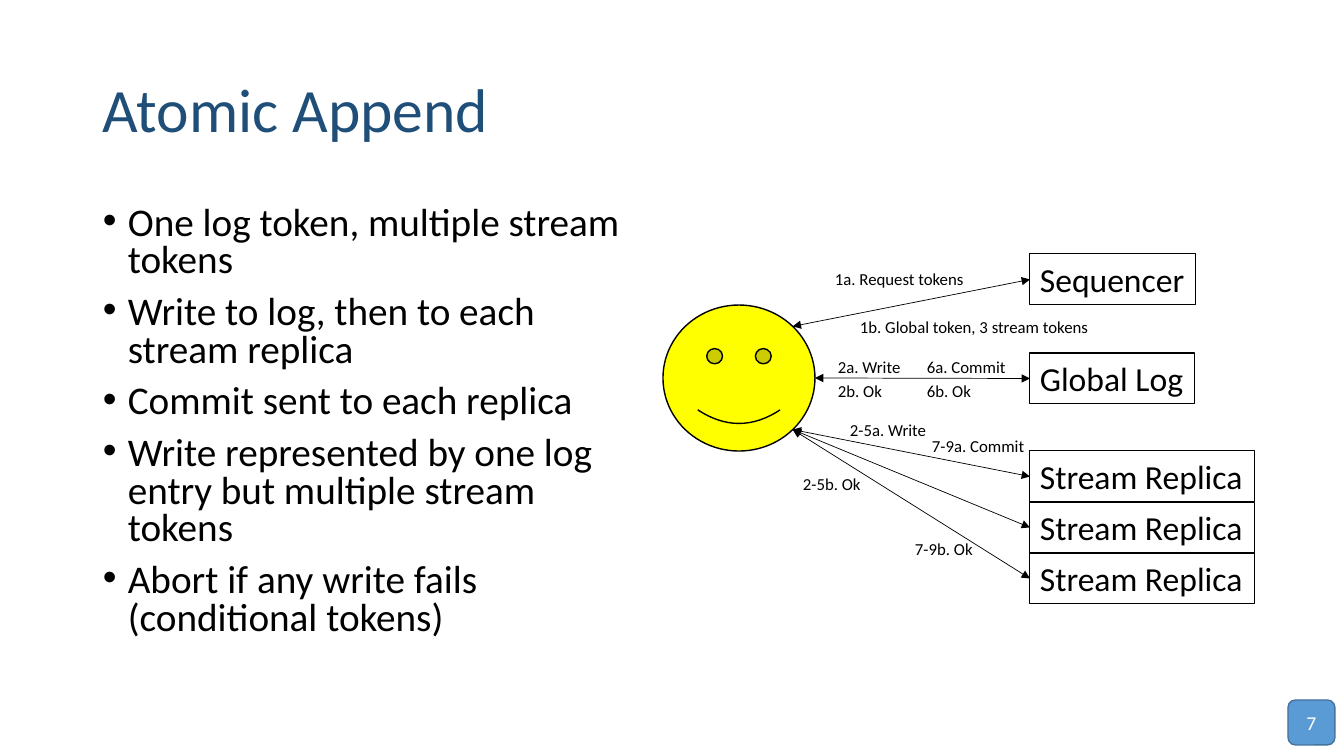
from math import cos, pi, sin

from lxml import etree
from pptx import Presentation
from pptx.dml.color import RGBColor
from pptx.enum.shapes import MSO_CONNECTOR, MSO_SHAPE
from pptx.enum.text import MSO_ANCHOR, MSO_AUTO_SIZE, PP_ALIGN
from pptx.oxml.ns import qn
from pptx.util import Pt

# Content, lengths in px
TITLE = "Atomic Append"
POINTS = [
    "One log token, multiple stream tokens",
    "Write to log, then to each stream replica",
    "Commit sent to each replica",
    "Write represented by one log entry but multiple stream tokens",
    "Abort if any write fails (conditional tokens)",
]
PAGE = "7"
# Server: name, top, width, angle at which its arrow leaves the client
SERVERS = [
    ("Sequencer", 254, 166, -pi / 4),
    ("Global Log", 353, 165, 0),
    ("Stream Replica", 451, 225, pi / 4),
    ("Stream Replica", 502, 225, pi / 4),
    ("Stream Replica", 553, 225, pi / 4),
]
# Message: text, left, top, width
MESSAGES = [
    ("1a. Request tokens", 825, 264, 150),
    ("1b. Global token, 3 stream tokens", 850, 312, 252),
    ("2a. Write", 828, 352, 86),
    ("6a. Commit", 917, 352, 102),
    ("2b. Ok", 828, 376, 67),
    ("6b. Ok", 917, 376, 67),
    ("2-5a. Write", 840, 415, 97),
    ("2-5b. Ok", 793, 469, 79),
    ("7-9a. Commit", 922, 431, 114),
    ("7-9b. Ok", 905, 534, 79),
]

CLIENT = (663, 305, 152, 146)
SERVER_LEFT, SERVER_HEIGHT, MESSAGE_HEIGHT = 1030, 51, 30
INDENT = 25

FONT = "Calibri"
BLACK = RGBColor(0x00, 0x00, 0x00)
WHITE = RGBColor(0xFF, 0xFF, 0xFF)
NAVY = RGBColor(0x1F, 0x4E, 0x79)
YELLOW = RGBColor(0xFF, 0xFF, 0x00)
BLUE = RGBColor(0x5B, 0x9B, 0xD5)
DARK_BLUE = RGBColor(0x43, 0x73, 0x9E)

RECT, ROUNDED, SMILEY = MSO_SHAPE.RECTANGLE, MSO_SHAPE.ROUNDED_RECTANGLE, MSO_SHAPE.SMILEY_FACE
STRAIGHT = MSO_CONNECTOR.STRAIGHT
MIDDLE, TOP = MSO_ANCHOR.MIDDLE, MSO_ANCHOR.TOP
LEFT, CENTER = PP_ALIGN.LEFT, PP_ALIGN.CENTER
GROW = MSO_AUTO_SIZE.SHAPE_TO_FIT_TEXT

SCALE = 914400 / 100.8


def emu(*lengths):
    return [round(length * SCALE) for length in lengths]


def apply(target, formats):
    for name, value in formats.items():
        setattr(target, name, value)


def write(shape, lines, size, color, frame_format, paragraph_format):
    frame = shape.text_frame
    apply(frame, frame_format)
    frame.text = "\n".join(lines)
    for paragraph in frame.paragraphs:
        apply(paragraph, paragraph_format)
        apply(paragraph.font, {"name": FONT, "size": Pt(size)})
        paragraph.font.color.rgb = color
    return frame


def add_box(kind, box, fill, line, width):
    shape = slide.shapes.add_shape(kind, *emu(*box))
    shape.shadow.inherit = False
    if fill is None:
        shape.fill.background()
    else:
        shape.fill.solid()
        shape.fill.fore_color.rgb = fill
    shape.line.color.rgb = line
    shape.line.width = Pt(width)
    return shape


def add_arrow(start, end):
    arrow = slide.shapes.add_connector(STRAIGHT, *emu(*start, *end))
    arrow.line.color.rgb = BLACK
    arrow.line.width = Pt(0.5)
    for tag in ("a:headEnd", "a:tailEnd"):
        etree.SubElement(arrow.line._get_or_add_ln(), qn(tag), type="triangle")
    etree.SubElement(arrow._element.spPr, qn("a:effectLst"))


deck = Presentation()
deck.slide_width, deck.slide_height = emu(1344, 756)
slide = deck.slides.add_slide(deck.slide_layouts[6])

# Title and bullet points
title = slide.shapes.add_textbox(*emu(93, 40, 1159, 146))
write(title, [TITLE], 44, NAVY, {"word_wrap": True, "vertical_anchor": MIDDLE},
      {"line_spacing": 0.9})

points = slide.shapes.add_textbox(*emu(93, 201, 539, 480))
points_frame = write(points, POINTS, 28, BLACK, {"word_wrap": True},
                     {"line_spacing": 0.8, "space_before": Pt(10)})
indent, = emu(INDENT)
for point in points_frame.paragraphs:
    properties = point._p.get_or_add_pPr()
    properties.set("marL", str(indent))
    properties.set("indent", str(-indent))
    bullet_font = etree.Element(qn("a:buFont"), typeface="Arial")
    bullet = etree.Element(qn("a:buChar"), char="•")
    properties.find(qn("a:spcBef")).addnext(bullet_font)
    bullet_font.addnext(bullet)

# Client, servers and the arrows between them
add_box(SMILEY, CLIENT, YELLOW, BLACK, 1)
left, top, width, height = CLIENT
for name, server_top, server_width, angle in SERVERS:
    server = add_box(RECT, (SERVER_LEFT, server_top, server_width, SERVER_HEIGHT),
                     None, BLACK, 0.75)
    write(server, [name], 24, BLACK,
          {"word_wrap": False, "auto_size": GROW, "vertical_anchor": TOP},
          {"alignment": LEFT})
    client_edge = (left + width / 2 * (1 + cos(angle)), top + height / 2 * (1 + sin(angle)))
    add_arrow(client_edge, (SERVER_LEFT, server_top + SERVER_HEIGHT / 2))

# Messages
for text, message_left, message_top, message_width in MESSAGES:
    message = slide.shapes.add_textbox(
        *emu(message_left, message_top, message_width, MESSAGE_HEIGHT))
    write(message, [text], 12, BLACK, {"word_wrap": False, "auto_size": GROW}, {})

# Page number
page = add_box(ROUNDED, (1288, 700, 47, 45), BLUE, DARK_BLUE, 1)
write(page, [PAGE], 14, WHITE, {"vertical_anchor": MIDDLE}, {"alignment": CENTER})

deck.save("out.pptx")
